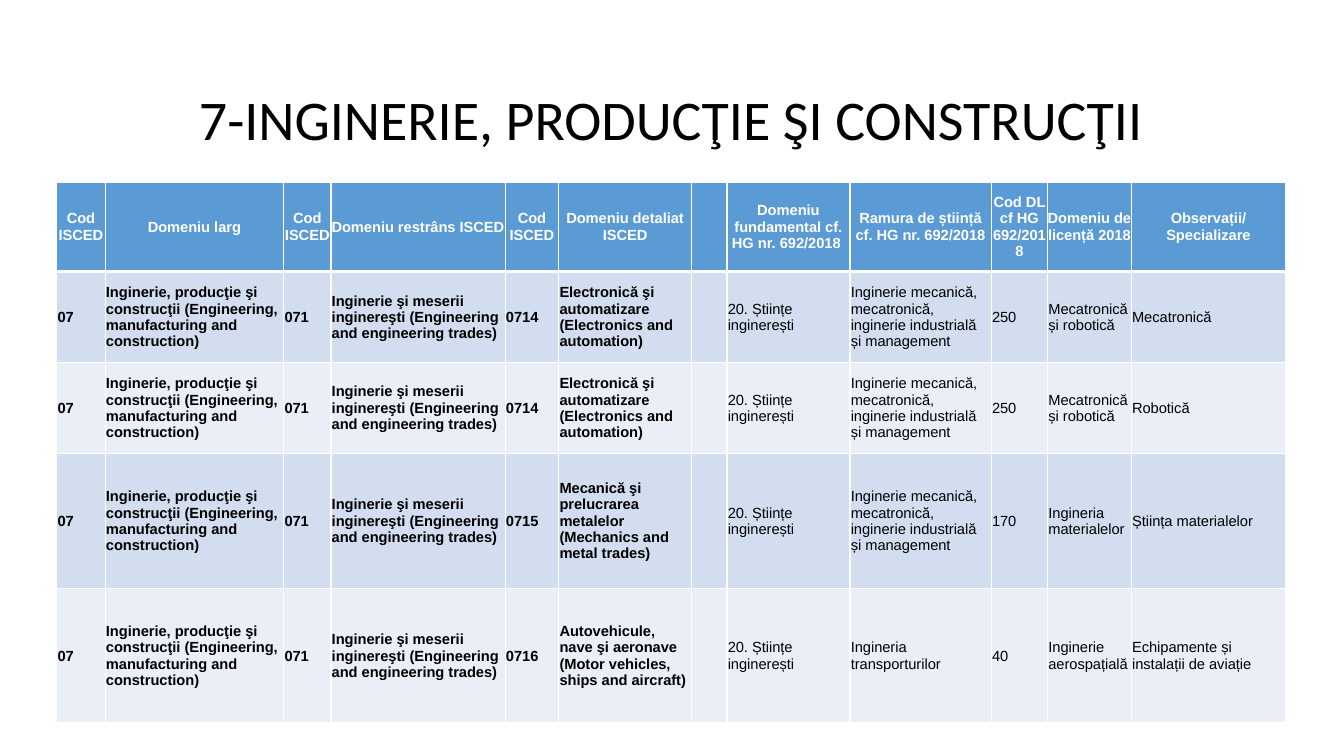
from dataclasses import dataclass

from lxml import etree
from pptx import Presentation
from pptx.dml import color
from pptx.enum import text
from pptx.oxml import ns
from pptx.util import Cm, Pt


@dataclass(frozen=True)
class Theme:
    title_font: str = "Calibri"
    table_font: str = "Arial"
    title_size: float = 40
    table_size: float = 10.5
    dark: str = "000000"
    light: str = "FFFFFF"
    header_fill: str = "5B9BD5"
    band_fills: tuple = ("D2DEEF", "EAEFF7")
    thin: float = 1
    thick: float = 3


THEME = Theme()

TITLE = "7-INGINERIE, PRODUCŢIE ŞI CONSTRUCŢII "
COLUMN_WIDTHS = (1.22, 4.5, 1.19, 4.39, 1.35, 3.35, 0.89, 3.1, 3.56, 1.42, 2.11, 3.89)
ROW_HEIGHTS = (2.24, 2.29, 2.29, 3.4, 3.4)
BOLD_COLUMNS = 6
BODY_INSET = 0.02

HEADERS = (
    "Cod ISCED", "Domeniu larg", "Cod ISCED", "Domeniu restrâns ISCED",
    "Cod ISCED", "Domeniu detaliat ISCED", "",
    "Domeniu fundamental cf. HG nr. 692/2018 ",
    "Ramura de știință cf. HG nr. 692/2018", "Cod DL cf HG 692/2018",
    "Domeniu de licență 2018", "Observații/ Specializare",
)
BROAD_FIELD = (
    "07", "Inginerie, producţie şi construcţii (Engineering, manufacturing and construction)",
    "071", "Inginerie şi meserii inginereşti (Engineering and engineering trades)",
)
FUNDAMENTAL_FIELD = ("", "20. Științe inginerești")
ELECTRONICS = ("0714", "Electronică şi automatizare (Electronics and automation)")
MECHANICS = ("0715", "Mecanică şi prelucrarea metalelor (Mechanics and metal trades)")
VEHICLES = ("0716", "Autovehicule, nave şi aeronave (Motor vehicles, ships and aircraft)")
MECHANICAL_BRANCH = "Inginerie mecanică, mecatronică, inginerie industrială și management"
MECHATRONICS = (MECHANICAL_BRANCH, "250", "Mecatronică și robotică")

# Detailed ISCED field, then branch, code, licence field and specialisation
PROGRAMMES = (
    (ELECTRONICS, (*MECHATRONICS, "Mecatronică")),
    (ELECTRONICS, (*MECHATRONICS, "Robotică")),
    (MECHANICS, (MECHANICAL_BRANCH, "170", "Ingineria materialelor", "Știința materialelor")),
    (VEHICLES, ("Ingineria transporturilor", "40", "Inginerie aerospațială",
                "Echipamente și instalații de aviație")),
)


def rgb(value):
    return color.RGBColor.from_string(value)


def add_run(paragraph, words, font, size, ink, bold=False):
    run = paragraph.add_run()
    run.text = words
    run.font.name = font
    run.font.size = Pt(size)
    run.font.bold = bold
    run.font.color.rgb = rgb(ink)


def add_title(slide):
    box = slide.shapes.add_textbox(Cm(2.46), Cm(2.18), Cm(29.21), Cm(1.83))
    frame = box.text_frame
    frame.word_wrap = True
    frame.vertical_anchor = text.MSO_ANCHOR.MIDDLE
    paragraph = frame.paragraphs[0]
    paragraph.alignment = text.PP_ALIGN.CENTER
    paragraph.line_spacing = 0.9
    add_run(paragraph, TITLE, THEME.title_font, THEME.title_size, THEME.dark)


def set_borders(cell, top, bottom):
    """Draw light borders; top and bottom are widths in points."""
    properties = cell._tc.get_or_add_tcPr()
    widths = {"a:lnL": THEME.thin, "a:lnR": THEME.thin, "a:lnT": top, "a:lnB": bottom}
    for position, (side, width) in enumerate(widths.items()):
        line = etree.Element(ns.qn(side), w=str(Pt(width)))
        fill = etree.SubElement(line, ns.qn("a:solidFill"))
        etree.SubElement(fill, ns.qn("a:srgbClr"), val=THEME.light)
        properties.insert(position, line)


def fill_cell(cell, words, fill, ink, bold, alignment, inset):
    cell.fill.solid()
    cell.fill.fore_color.rgb = rgb(fill)
    cell.vertical_anchor = text.MSO_ANCHOR.MIDDLE
    cell.margin_left = cell.margin_top = cell.margin_right = Cm(inset)
    cell.margin_bottom = Cm(0)
    paragraph = cell.text_frame.paragraphs[0]
    paragraph.alignment = alignment
    if words:
        add_run(paragraph, words, THEME.table_font, THEME.table_size, ink, bold)


def add_programme_table(slide):
    rows = [HEADERS] + [
        BROAD_FIELD + detailed + FUNDAMENTAL_FIELD + licence
        for detailed, licence in PROGRAMMES
    ]
    table = slide.shapes.add_table(
        len(rows), len(HEADERS), Cm(1.43), Cm(4.6),
        Cm(sum(COLUMN_WIDTHS)), Cm(sum(ROW_HEIGHTS))).table
    for column, width in zip(table.columns, COLUMN_WIDTHS):
        column.width = Cm(width)
    for row, height in zip(table.rows, ROW_HEIGHTS):
        row.height = Cm(height)

    for r, row in enumerate(rows):
        for c, words in enumerate(row):
            cell = table.cell(r, c)
            if r == 0:
                fill_cell(cell, words, THEME.header_fill, THEME.light, True,
                          text.PP_ALIGN.CENTER, 0)
            else:
                fill_cell(cell, words, THEME.band_fills[(r - 1) % 2], THEME.dark,
                          c < BOLD_COLUMNS, text.PP_ALIGN.LEFT, BODY_INSET)
            set_borders(cell,
                        top=THEME.thick if r == 1 else THEME.thin,
                        bottom=THEME.thick if r == 0 else THEME.thin)


def main():
    presentation = Presentation()
    presentation.slide_width = Cm(33.87)
    presentation.slide_height = Cm(19.05)
    slide = presentation.slides.add_slide(presentation.slide_layouts[6])
    add_title(slide)
    add_programme_table(slide)
    presentation.save("out.pptx")


if __name__ == "__main__":
    main()
